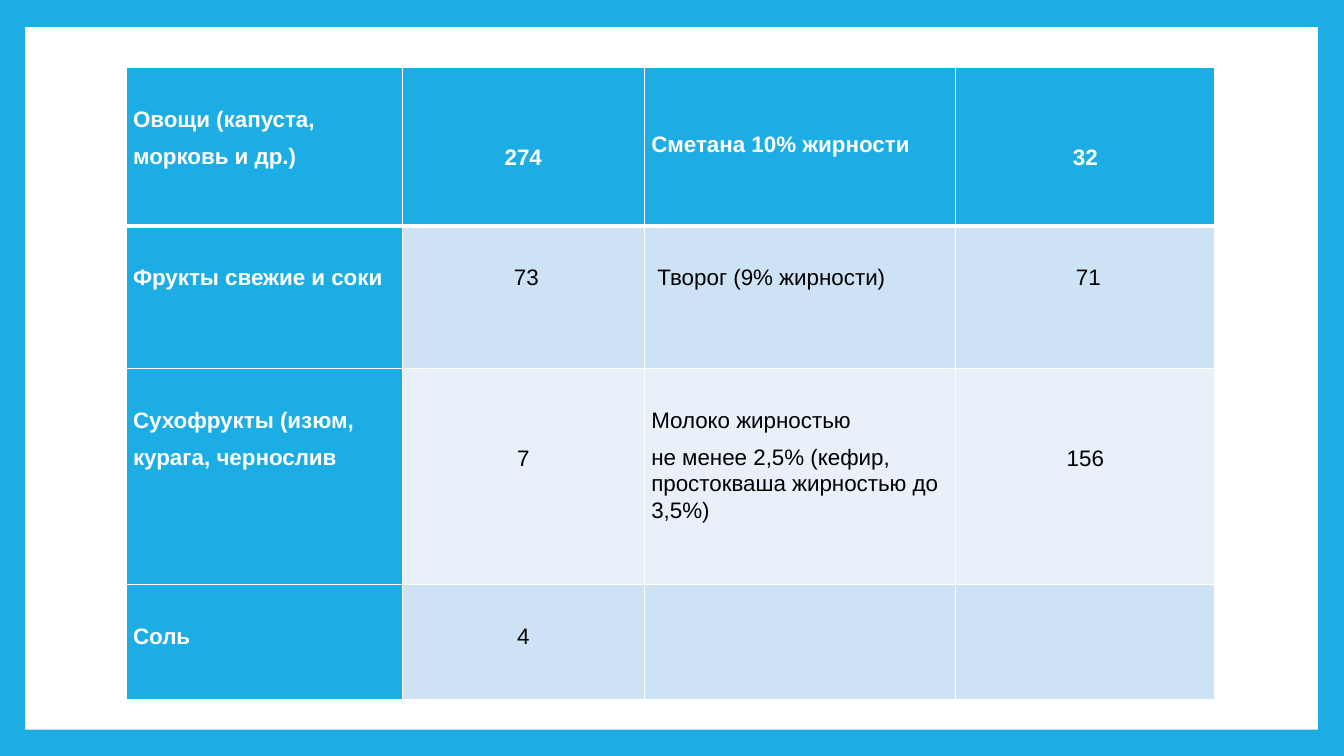
from lxml import etree
from pptx import Presentation, util as u
from pptx.dml.color import RGBColor
from pptx.enum import shapes, text
from pptx.oxml.ns import qn

COLORS = {"blue": "1CADE4", "white": "FFFFFF", "black": "000000",
          "band_dark": "CDE3F5", "band_light": "E8F1FA"}
FONT, SIZE = "Arial", 16
LINE = 0.38  # one text line with its spacing, inches
COLS = [2.74, 2.4, 3.09, 2.57]
ROWS = [1.57, 1.42, 2.14, 1.14]

# Each cell: lines of space above the text, then its paragraphs
PRODUCTS = [
    [(1, ["Овощи (капуста,", "морковь и др.)"]), (2, ["274"]),
     (1.67, ["Сметана 10% жирности"]), (2, ["32"])],
    [(1, ["Фрукты свежие и соки"]), (1, [" 73"]),
     (1, [" Творог (9% жирности)"]), (1, [" 71"])],
    [(1, ["Сухофрукты (изюм,", "курага, чернослив"]), (2, ["7"]),
     (1, ["Молоко жирностью",
          "не менее 2,5% (кефир, простокваша жирностью до 3,5%)"]),
     (2, ["156"])],
    [(1, ["Соль"]), (1, ["4"]), (0, []), (0, [])],
]


def rgb(name):
    return RGBColor.from_string(COLORS[name])


def set_borders(cell, widths):
    """Draw white borders; widths are points for left, right, top, bottom."""
    tcPr = cell._tc.get_or_add_tcPr()
    for i, (side, width) in enumerate(zip("LRTB", widths)):
        ln = etree.Element(qn(f"a:ln{side}"), w=str(u.Pt(width)))
        fill = etree.SubElement(ln, qn("a:solidFill"))
        etree.SubElement(fill, qn("a:srgbClr"), val=COLORS["white"])
        tcPr.insert(i, ln)


def fill_cell(cell, row, col, lines_above, paragraphs):
    heading = row == 0 or col == 0
    band = "band_dark" if row % 2 else "band_light"
    cell.fill.solid()
    cell.fill.fore_color.rgb = rgb("blue" if heading else band)
    set_borders(cell, (1, 1, 3 if row == 1 else 1, 3 if row == 0 else 1))
    cell.margin_left = cell.margin_right = u.Inches(0.07)
    cell.margin_top, cell.margin_bottom = u.Inches(lines_above * LINE), 0
    tf = cell.text_frame
    tf.text = "\n".join(paragraphs)
    for p in tf.paragraphs:
        p.line_spacing, p.space_after = 1.05, u.Pt(8)
        p.alignment = text.PP_ALIGN.CENTER if col % 2 else text.PP_ALIGN.LEFT
        p.font.size = u.Pt(SIZE)
        for r in p.runs:
            r.font.name, r.font.size, r.font.bold = FONT, u.Pt(SIZE), heading
            r.font.color.rgb = rgb("white" if heading else "black")


def add_panel(s, x, y, w, h):
    """White sheet inside the blue frame."""
    sp = s.shapes.add_shape(shapes.MSO_SHAPE.RECTANGLE,
                            *map(u.Inches, (x, y, w, h)))
    sp.shadow.inherit = False
    sp.fill.solid()
    sp.fill.fore_color.rgb = rgb("white")
    sp.line.fill.background()


def add_products(s, x, y):
    """Table of products and daily amounts."""
    table = s.shapes.add_table(
        len(ROWS), len(COLS),
        *map(u.Inches, (x, y, sum(COLS), sum(ROWS)))).table
    table.first_col = True
    for column, width in zip(table.columns, COLS):
        column.width = u.Inches(width)
    for i, height in enumerate(ROWS):
        table.rows[i].height = u.Inches(height)
        for j, (lines_above, paragraphs) in enumerate(PRODUCTS[i]):
            fill_cell(table.cell(i, j), i, j, lines_above, paragraphs)


def main():
    prs = Presentation()
    prs.slide_width, prs.slide_height = u.Inches(13.33), u.Inches(7.5)
    s = prs.slides.add_slide(prs.slide_layouts[6])
    s.background.fill.solid()
    s.background.fill.fore_color.rgb = rgb("blue")
    add_panel(s, 0.25, 0.27, 12.82, 6.97)
    add_products(s, 1.25, 0.67)
    prs.save("out.pptx")


if __name__ == "__main__":
    main()
